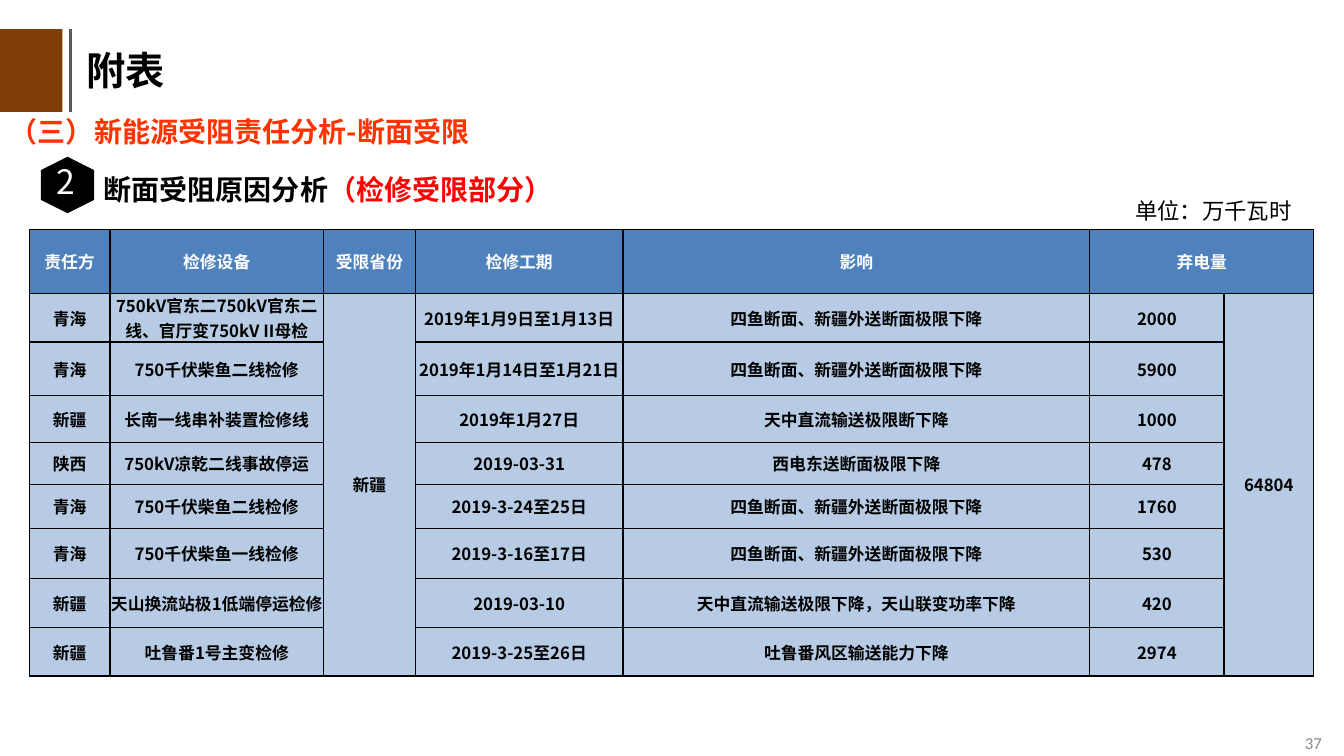
"""Build the slide on transmission sections limited by maintenance."""
from dataclasses import dataclass
from typing import Any

from lxml import etree
from pptx import Presentation
from pptx import util as u
from pptx.dml.color import RGBColor
from pptx.enum import shapes, text
from pptx.oxml import ns

BLACK = RGBColor(0x00, 0x00, 0x00)
WHITE = RGBColor(0xFF, 0xFF, 0xFF)
BROWN = RGBColor(0x80, 0x3D, 0x06)
DARK_GRAY = RGBColor(0x59, 0x59, 0x59)
PAGE_GRAY = RGBColor(0x89, 0x89, 0x89)
ORANGE = RGBColor(0xFF, 0x33, 0x00)
RED = RGBColor(0xFF, 0x00, 0x00)
HEADER_BLUE = RGBColor(0x4F, 0x81, 0xBD)
BODY_BLUE = RGBColor(0xB7, 0xCC, 0xE4)

CJK = "Noto Sans CJK SC"
LATIN = "Calibri"
COL_WIDTHS = (0.8, 2.12, 0.91, 2.06, 4.63, 1.33, 0.89)
ROW_HEIGHTS = (0.63, 0.47, 0.53, 0.47, 0.41, 0.44, 0.5, 0.48, 0.48)
HEADER = ("责任方", "检修设备", "受限省份", "检修工期", "影响", "弃电量", "")
PROVINCE, TOTAL = "新疆", "64804"
PROVINCE_COL, LOSS_COL, TOTAL_COL = 2, 5, 6
SECTION_LIMIT = "四鱼断面、新疆外送断面极限下降"


@dataclass(frozen=True)
class Outage:
    party: str
    equipment: str
    period: str
    effect: str
    loss: str


@dataclass(frozen=True)
class Label:
    box: tuple[float, float, float, float]
    runs: tuple[tuple[str, RGBColor], ...]
    size: int
    font: str = CJK
    bold: bool = False
    spacing: float = 1.0
    align: Any = text.PP_ALIGN.LEFT
    anchor: Any = text.MSO_ANCHOR.TOP
    wrap: bool = True


OUTAGES = (
    Outage("青海", "750kV官东二750kV官东二线、官厅变750kV II母检",
           "2019年1月9日至1月13日", SECTION_LIMIT, "2000"),
    Outage("青海", "750千伏柴鱼二线检修", "2019年1月14日至1月21日", SECTION_LIMIT, "5900"),
    Outage("新疆", "长南一线串补装置检修线", "2019年1月27日", "天中直流输送极限断下降", "1000"),
    Outage("陕西", "750kV凉乾二线事故停运", "2019-03-31", "西电东送断面极限下降", "478"),
    Outage("青海", "750千伏柴鱼二线检修", "2019-3-24至25日", SECTION_LIMIT, "1760"),
    Outage("青海", "750千伏柴鱼一线检修", "2019-3-16至17日", SECTION_LIMIT, "530"),
    Outage("新疆", "天山换流站极1低端停运检修", "2019-03-10",
           "天中直流输送极限下降，天山联变功率下降", "420"),
    Outage("新疆", "吐鲁番1号主变检修", "2019-3-25至26日", "吐鲁番风区输送能力下降", "2974"),
)

TITLE = Label((0.76, 0.41, 6.84, 0.57), (("附表", BLACK),), 28, bold=True)
LABELS = (
    Label((10.1, 7.17, 3.11, 0.4), (("37", PAGE_GRAY),), 12, LATIN,
          align=text.PP_ALIGN.RIGHT, anchor=text.MSO_ANCHOR.MIDDLE),
    Label((0, 1.02, 12, 0.55), (("（三）新能源受阻责任分析-断面受限", ORANGE),), 20,
          bold=True, spacing=1.2),
    Label((11.16, 1.91, 1.87, 0.37), (("单位：万千瓦时", BLACK),), 16),
    Label((0.93, 1.6, 5.29, 0.5),
          (("断面受阻原因分析", BLACK), ("（检修受限部分）", RED)), 20, LATIN,
          bold=True, spacing=1.2),
    Label((0.46, 1.55, 0.4, 0.5), (("2", WHITE),), 24, wrap=False),
)


def set_all(target: Any, values: dict[str, Any]) -> None:
    for name, value in values.items():
        setattr(target, name, value)


def add_run(p: Any, words: str, size: int, font: str, bold: bool, color: RGBColor) -> None:
    r = p.add_run()
    r.text = words
    set_all(r.font, {"size": u.Pt(size), "name": font, "bold": bold})
    r.font.color.rgb = color
    etree.SubElement(r.font._element, ns.qn("a:ea"), typeface=CJK)


def fill_label(sp: Any, label: Label) -> None:
    box = map(u.Inches, label.box)
    set_all(sp, dict(zip(("left", "top", "width", "height"), box)))
    tf = sp.text_frame
    set_all(tf, {"word_wrap": label.wrap, "vertical_anchor": label.anchor,
                 "auto_size": text.MSO_AUTO_SIZE.NONE})
    p = tf.paragraphs[0]
    set_all(p, {"alignment": label.align, "line_spacing": label.spacing})
    for words, color in label.runs:
        add_run(p, words, label.size, label.font, label.bold, color)


def add_solid(parent: Any, kind: Any, box: tuple[float, ...], color: RGBColor) -> Any:
    sp = parent.add_shape(kind, *map(u.Inches, box))
    sp.shadow.inherit = False
    sp.fill.solid()
    sp.fill.fore_color.rgb = color
    sp.line.fill.background()
    return sp


def add_title_mark(s: Any) -> None:
    group = s.shapes.add_group_shape().shapes
    add_solid(group, shapes.MSO_SHAPE.RECTANGLE, (0, 0.29, 0.62, 0.82), BROWN)
    ends = map(u.Inches, (0.7, 0.29, 0.7, 1.11))
    rule = group.add_connector(shapes.MSO_CONNECTOR.STRAIGHT, *ends)
    rule.line.color.rgb = DARK_GRAY
    rule.line.width = u.Pt(2.25)
    etree.SubElement(rule._element.spPr, ns.qn("a:effectLst"))


def format_cell(cell: Any, words: str, fill: RGBColor, color: RGBColor) -> None:
    margins = ("margin_left", "margin_right", "margin_top", "margin_bottom")
    set_all(cell, dict.fromkeys(margins, 0))
    cell.vertical_anchor = text.MSO_ANCHOR.MIDDLE
    tc_pr = cell._tc.get_or_add_tcPr()
    for side in ("lnL", "lnR", "lnT", "lnB"):
        ln = etree.SubElement(tc_pr, ns.qn(f"a:{side}"), w=str(u.Pt(1)))
        solid = etree.SubElement(ln, ns.qn("a:solidFill"))
        etree.SubElement(solid, ns.qn("a:srgbClr"), val=str(BLACK))
    cell.fill.solid()
    cell.fill.fore_color.rgb = fill
    if words:
        p = cell.text_frame.paragraphs[0]
        p.alignment = text.PP_ALIGN.CENTER
        add_run(p, words, 12, CJK, True, color)


def add_outage_table(s: Any) -> None:
    rows = [HEADER]
    for i, o in enumerate(OUTAGES):
        province, total = (PROVINCE, TOTAL) if i == 0 else ("", "")
        rows.append((o.party, o.equipment, province, o.period, o.effect, o.loss, total))
    box = map(u.Inches, (0.29, 2.28, sum(COL_WIDTHS), sum(ROW_HEIGHTS)))
    table = s.shapes.add_table(len(rows), len(HEADER), *box).table
    for column, width in zip(table.columns, COL_WIDTHS):
        column.width = u.Inches(width)
    for row, height in zip(table.rows, ROW_HEIGHTS):
        row.height = u.Inches(height)
    for i, values in enumerate(rows):
        fill, color = (BODY_BLUE, BLACK) if i else (HEADER_BLUE, WHITE)
        for j, words in enumerate(values):
            format_cell(table.cell(i, j), words, fill, color)
    table.cell(0, LOSS_COL).merge(table.cell(0, TOTAL_COL))
    for j in (PROVINCE_COL, TOTAL_COL):
        table.cell(1, j).merge(table.cell(len(OUTAGES), j))


def main() -> None:
    prs = Presentation()
    set_all(prs, {"slide_width": u.Inches(13.33), "slide_height": u.Inches(7.5)})
    s = prs.slides.add_slide(prs.slide_layouts[5])
    add_title_mark(s)
    fill_label(s.shapes.title, TITLE)
    add_outage_table(s)
    badge = add_solid(s.shapes, shapes.MSO_SHAPE.HEXAGON, (0.39, 1.57, 0.56, 0.53), BLACK)
    badge.rotation = 270
    badge.adjustments[0] = 0.25
    for label in LABELS:
        fill_label(s.shapes.add_textbox(0, 0, 0, 0), label)
    prs.save("out.pptx")


if __name__ == "__main__":
    main()
